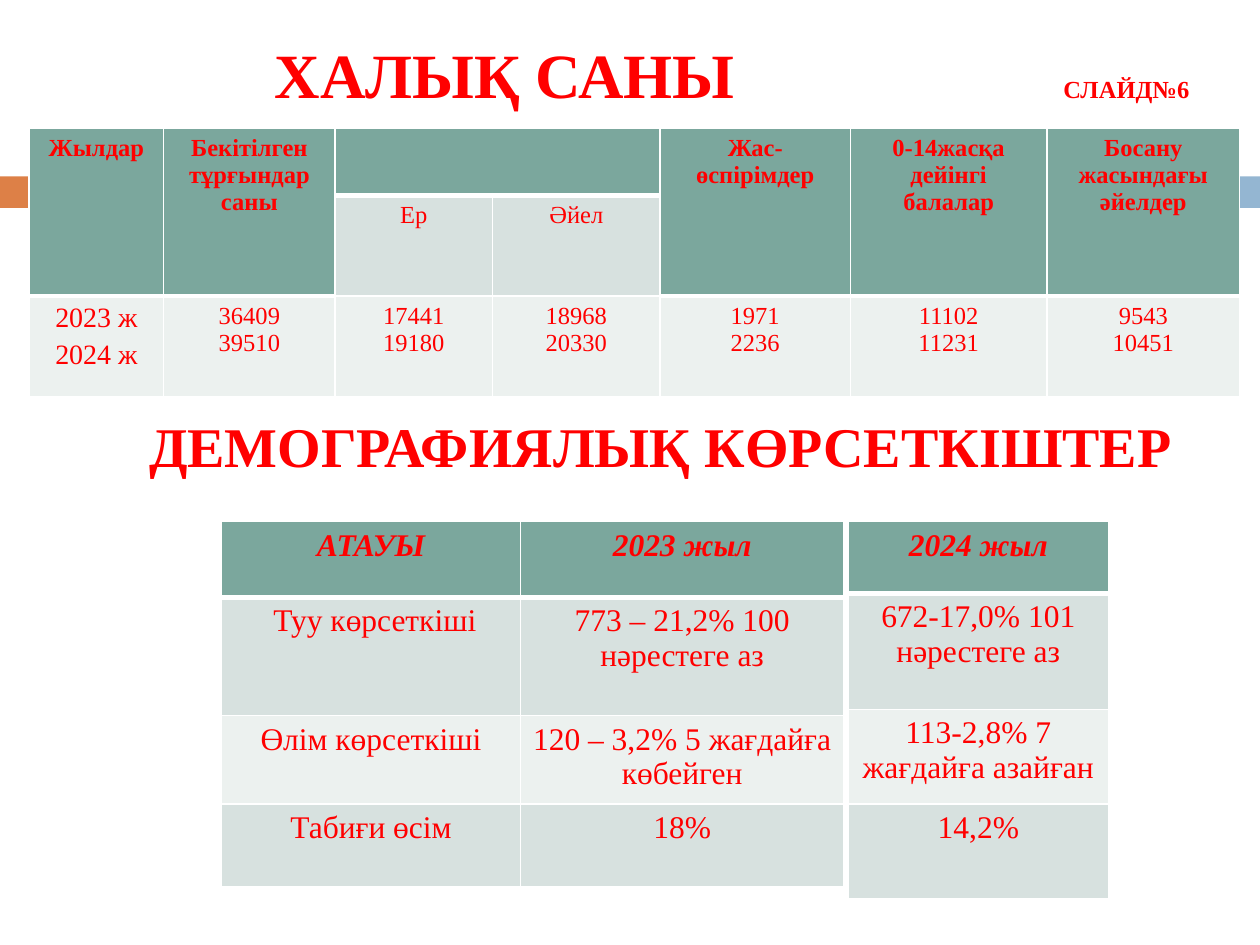
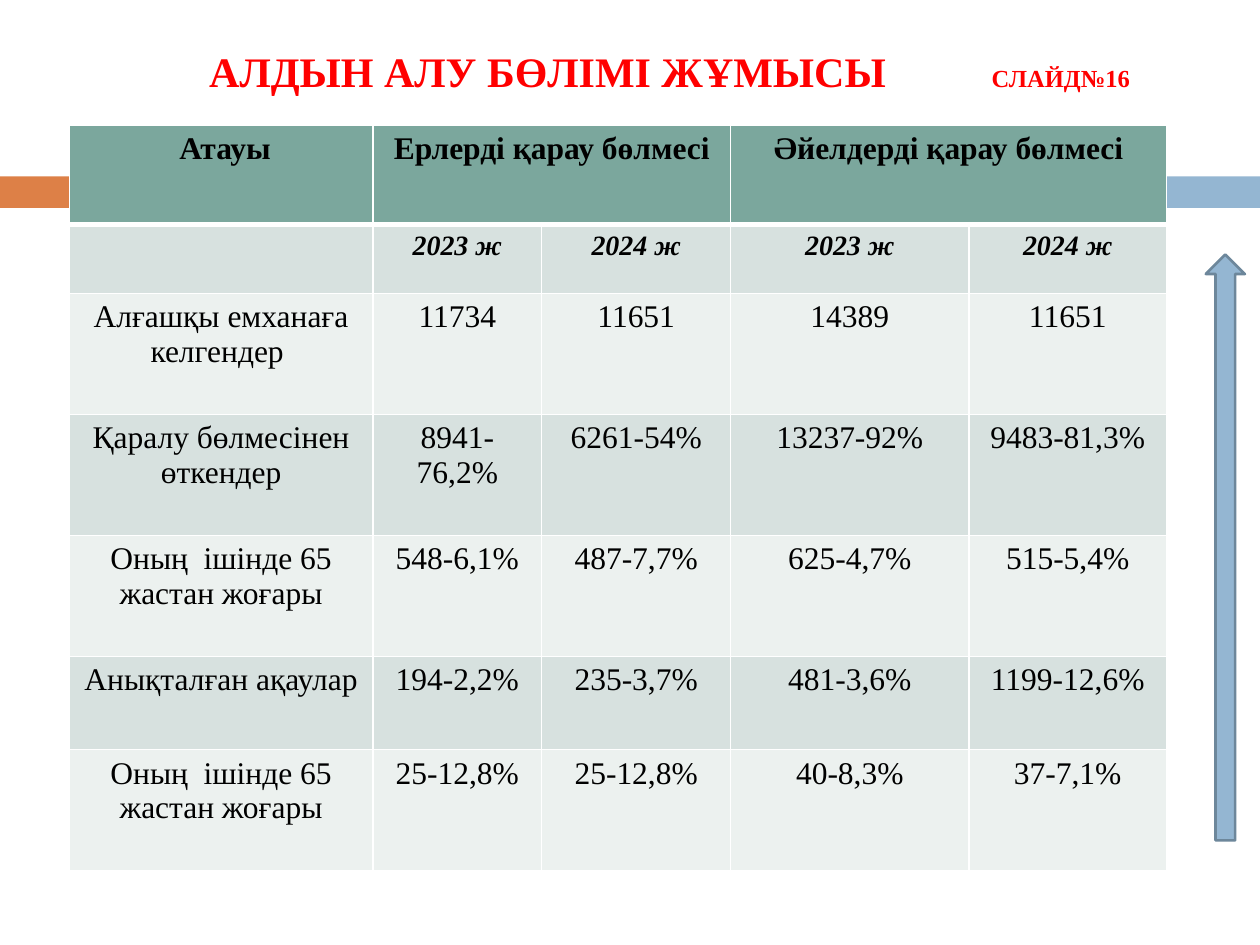
import pptx
import pptx.util
import pptx.dml.color
import pptx.enum.shapes
import pptx.enum.text
import pptx.oxml
import pptx.oxml.ns
from dataclasses import dataclass
from lxml import etree

LEFT, UP = "<", "^"  # cell merged into its neighbour on the left / above


@dataclass(frozen=True)
class Theme:
    font: str = "Times New Roman"
    red: str = "FF0000"
    black: str = "000000"
    white: str = "FFFFFF"
    gold: str = "A9873B"
    orange: str = "DD8047"
    blue: str = "94B6D2"
    blue_edge: str = "6D879B"
    header: str = "7BA79D"
    stripes: tuple = ("ECF1EF", "D7E1DF")
    label_size: int = 14
    outline: float = 0.71
    thin: int = 1
    thick: int = 3


THEME = Theme()
SLIDE_W, SLIDE_H = 10, 7.5

# left, top, width, height in inches
BANDS = [((0, 1.4, 0.58, 0.25), THEME.orange),
         ((0.65, 1.4, 9.35, 0.25), THEME.blue)]

# Row styles are (size, bold, italic), one per row; the last one carries on.
SLIDES = [
    {
        "titles": [
            {"box": (1.8, 0.23, 8.03, 0.71), "text": "ХАЛЫҚ САНЫ", "size": 36,
             "label": "СЛАЙД№6", "text_x": 2.18, "label_x": 8.44},
            {"box": (0.66, 3.22, 9.17, 0.64),
             "text": "ДЕМОГРАФИЯЛЫҚ КӨРСЕТКІШТЕР", "size": 32},
        ],
        "tables": [
            {"at": (0.23, 1.02), "color": THEME.red,
             "cols": [1.07, 1.36, 1.25, 1.33, 1.51, 1.56, 1.53],
             "rows": [0.53, 0.8, 0.8],
             "styles": [(14, True, False), (14, False, False)],
             "large": {(2, 0): 16},
             "cells": [
                 ["Жылдар", "Бекітілген тұрғындар саны", "", LEFT, "Жас-\nөспірімдер",
                  "0-14жасқа дейінгі балалар", "Босану жасындағы әйелдер"],
                 [UP, UP, "Ер", "Әйел", UP, UP, UP],
                 ["2023 ж\n2024 ж", "36409\n39510", "17441\n19180", "18968\n20330",
                  "1971\n2236", "11102\n11231", "9543\n10451"],
             ]},
            {"at": (1.76, 4.14), "color": THEME.red,
             "cols": [2.37, 2.57],
             "rows": [0.6, 0.94, 0.7, 0.66],
             "styles": [(18, True, True), (18, False, False)],
             "cells": [
                 ["АТАУЫ", "2023 жыл"],
                 [" Туу көрсеткіші", "773 – 21,2% 100 нәрестеге аз"],
                 ["Өлім көрсеткіші", "120 – 3,2% 5 жағдайға көбейген"],
                 ["Табиғи өсім", "18%"],
             ]},
            {"at": (6.73, 4.14), "color": THEME.red,
             "cols": [2.07],
             "rows": [0.57, 0.92, 0.75, 0.75],
             "styles": [(18, True, True), (18, False, False)],
             "cells": [
                 ["2024 жыл"],
                 ["672-17,0% 101 нәрестеге аз"],
                 ["113-2,8% 7 жағдайға азайған"],
                 ["14,2%"],
             ]},
        ],
    },
    {
        "titles": [
            {"box": (1.17, 0.31, 8.28, 0.5), "text": "АЛДЫН АЛУ БӨЛІМІ ЖҰМЫСЫ", "size": 24,
             "label": "СЛАЙД№16", "text_x": 1.66, "label_x": 7.87},
        ],
        "tables": [
            {"at": (0.55, 0.99), "color": THEME.black,
             "cols": [2.41, 1.34, 1.5, 1.89, 1.57],
             "rows": [0.79, 0.55, 0.96, 0.96, 0.96, 0.74, 0.96],
             "styles": [(18, True, False), (16, True, True), (18, False, False)],
             "cells": [
                 [" Атауы", "Ерлерді қарау бөлмесі", LEFT, "Әйелдерді қарау бөлмесі", LEFT],
                 ["", "2023 ж", "2024 ж", "2023 ж", "2024 ж"],
                 ["Алғашқы емханаға келгендер ", "11734", "11651", "14389", "11651"],
                 ["Қаралу бөлмесінен өткендер", "8941-76,2%", "6261-54%", "13237-92%",
                  "9483-81,3%"],
                 ["Оның  ішінде 65 жастан жоғары", "548-6,1%", "487-7,7%", "625-4,7%",
                  "515-5,4%"],
                 ["Анықталған ақаулар", "194-2,2%", "235-3,7%", "481-3,6%", "1199-12,6%"],
                 ["Оның  ішінде 65 жастан жоғары", "25-12,8%", "25-12,8%", "40-8,3%",
                  "37-7,1%"],
             ]},
        ],
        "arrow": (9.57, 2.02, 0.31, 4.65),
    },
]


def inches(values):
    return [pptx.util.Inches(v) for v in values]


def rgb(color):
    return pptx.dml.color.RGBColor.from_string(color)


def add_line(parent, tag, color, width):
    """Append a solid line element such as a:lnL or a:ln."""
    ln = etree.SubElement(parent, pptx.oxml.ns.qn(tag), w=str(int(pptx.util.Pt(width))))
    fill = etree.SubElement(ln, pptx.oxml.ns.qn("a:solidFill"))
    etree.SubElement(fill, pptx.oxml.ns.qn("a:srgbClr"), val=color)
    return ln


def format_run(r, size, color, bold, italic=False):
    r.font.name = THEME.font
    r.font.size = pptx.util.Pt(size)
    r.font.color.rgb = rgb(color)
    r.font.bold = bold
    r.font.italic = italic


def add_block(s, preset, box, fill, edge=None):
    sp = s.shapes.add_shape(preset, *inches(box))
    sp.shadow.inherit = False
    sp.fill.solid()
    sp.fill.fore_color.rgb = rgb(fill)
    if edge:
        sp.line.color.rgb = rgb(edge)
        sp.line.width = pptx.util.Pt(1.5)
    else:
        sp.line.fill.background()


def add_title(s, title):
    """Centre a lone title; set a labelled one from the left with a tab stop."""
    tf = s.shapes.add_textbox(*inches(title["box"])).text_frame
    tf.word_wrap = True
    p = tf.paragraphs[0]
    p.alignment = pptx.enum.text.PP_ALIGN.CENTER
    parts = [(title["text"], title["size"])]
    if "label" in title:
        p.alignment = pptx.enum.text.PP_ALIGN.LEFT
        tf.margin_left = pptx.util.Inches(title["text_x"] - title["box"][0])
        tabs = etree.SubElement(p._p.get_or_add_pPr(), pptx.oxml.ns.qn("a:tabLst"))
        stop = pptx.util.Inches(title["label_x"] - title["text_x"])
        etree.SubElement(tabs, pptx.oxml.ns.qn("a:tab"), pos=str(int(stop)), algn="l")
        parts.append(("\t" + title["label"], THEME.label_size))
    for text, size in parts:
        r = p.add_run()
        r.text = text
        format_run(r, size, THEME.red, True)
        r_pr = r._r.get_or_add_rPr()
        r_pr.insert(0, add_line(r_pr, "a:ln", THEME.gold, THEME.outline))


def origin_of(cells, row, col):
    """Follow the merge marks to the cell that holds the text."""
    while cells[row][col] in (LEFT, UP):
        if cells[row][col] == LEFT:
            col -= 1
        else:
            row -= 1
    return row, col


def style_cell(cell, row):
    """Give a cell the borders and fill of the row its text belongs to."""
    tc_pr = cell._tc.get_or_add_tcPr()
    bottom = THEME.thin if row else THEME.thick
    for side, width in zip("LRTB", [THEME.thin] * 3 + [bottom]):
        add_line(tc_pr, "a:ln" + side, THEME.white, width)
    cell.fill.solid()
    cell.fill.fore_color.rgb = rgb(THEME.stripes[row % 2] if row else THEME.header)


def write_cell(cell, text, style, color, large):
    size, bold, italic = style
    cell.text_frame.text = text
    for p in cell.text_frame.paragraphs:
        p.alignment = pptx.enum.text.PP_ALIGN.CENTER
        if large:
            p.space_before = pptx.util.Pt(0.2 * large)
        for r in p.runs:
            format_run(r, large or size, color, bold, italic)


def add_grid(s, grid):
    cols, rows, cells = grid["cols"], grid["rows"], grid["cells"]
    box = (*grid["at"], sum(cols), sum(rows))
    table = s.shapes.add_table(len(rows), len(cols), *inches(box)).table
    for column, width in zip(table.columns, inches(cols)):
        column.width = width
    for line, height in zip(table.rows, inches(rows)):
        line.height = height

    ends = {}
    for row, texts in enumerate(cells):
        style = grid["styles"][min(row, len(grid["styles"]) - 1)]
        for col, text in enumerate(texts):
            origin = origin_of(cells, row, col)
            ends[origin] = (row, col)
            style_cell(table.cell(row, col), origin[0])
            if text and origin == (row, col):
                write_cell(table.cell(row, col), text, style, grid["color"],
                           grid.get("large", {}).get(origin))
    for start, end in ends.items():
        if start != end:
            table.cell(*start).merge(table.cell(*end))


def main():
    prs = pptx.Presentation()
    prs.slide_width, prs.slide_height = inches((SLIDE_W, SLIDE_H))
    shapes = pptx.enum.shapes.MSO_SHAPE
    for content in SLIDES:
        s = prs.slides.add_slide(prs.slide_layouts[6])
        for box, color in BANDS:
            add_block(s, shapes.RECTANGLE, box, color)
        for grid in content["tables"]:
            add_grid(s, grid)
        for title in content["titles"]:
            add_title(s, title)
        if "arrow" in content:
            add_block(s, shapes.UP_ARROW, content["arrow"], THEME.blue, THEME.blue_edge)
    prs.save("out.pptx")


if __name__ == "__main__":
    main()
